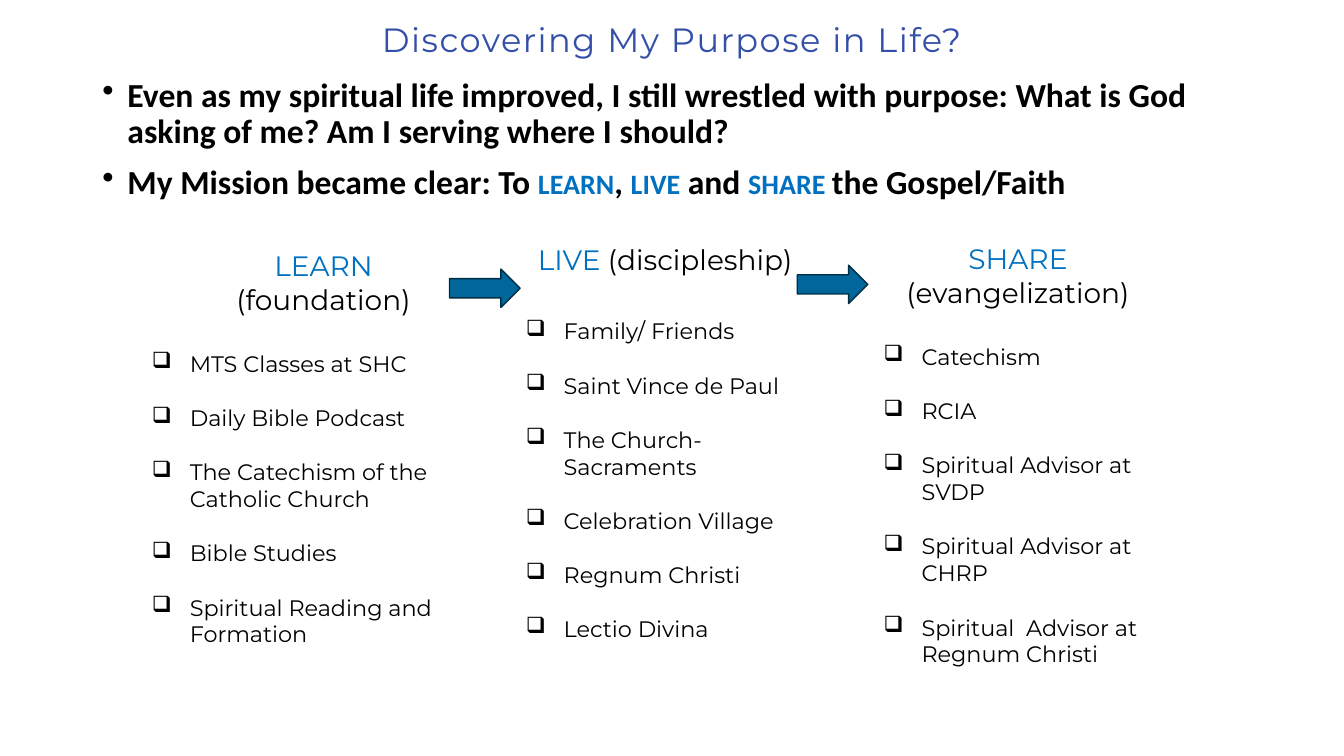
from lxml import etree
from pptx import Presentation
from pptx.dml import color
from pptx.enum import shapes, text
from pptx.oxml import ns
from pptx.util import Pt

BLUE, BLACK = "0070C0", "000000"
COLUMNS = [
    (101.5, 174.2, 259.2, 332, 24.4,
     [[("LEARN", BLUE)], [("(foundation)", BLACK)]],
     ["MTS Classes at SHC", "Daily Bible Podcast",
      "The Catechism of the Catholic Church", "Bible Studies",
      "Spiritual Reading and Formation"]),
    (368.6, 169.9, 213.1, 317.5, 29.3,
     [[("LIVE ", BLUE), ("(discipleship)", BLACK)]],
     ["Family/ Friends", "Saint Vince de Paul", "The Church-Sacraments",
      "Celebration Village", "Regnum Christi", "Lectio Divina"]),
    (624.2, 169.2, 205.9, 356.4, 24.4,
     [[("SHARE", BLUE)], [("(evangelization)", BLACK)]],
     ["Catechism", "RCIA", "Spiritual Advisor at SVDP",
      "Spiritual Advisor at CHRP", "Spiritual  Advisor at Regnum Christi"]),
]


def rgb(value):
    """Return the colour for a hex string."""
    return color.RGBColor.from_string(value)


def format_run(run, name, size, fill, bold=False):
    """Set the font of a run."""
    run.font.name = name
    run.font.size = Pt(size)
    run.font.bold = bold
    run.font.color.rgb = rgb(fill)


def add_run(paragraph, wording, name, size, fill, bold=False):
    """Append a formatted run to a paragraph."""
    run = paragraph.add_run()
    run.text = wording
    format_run(run, name, size, fill, bold)


def set_bullet(paragraph, character, indent):
    """Give a paragraph a bullet with a hanging indent."""
    properties = paragraph._p.get_or_add_pPr()
    properties.set("marL", str(Pt(indent)))
    properties.set("indent", str(Pt(-indent)))
    etree.SubElement(properties, ns.qn("a:buChar")).set("char", character)


def add_text_box(slide, left, top, width, height):
    """Add a wrapping text box and return its text frame."""
    frame = slide.shapes.add_textbox(
        Pt(left), Pt(top), Pt(width), Pt(height)).text_frame
    frame.word_wrap = True
    return frame


def next_paragraph(frame, index):
    """Return the first paragraph of a frame, or a new one after it."""
    return frame.add_paragraph() if index else frame.paragraphs[0]


def format_title(title):
    """Place and format the title placeholder."""
    title.left, title.top = Pt(66), Pt(-45.4)
    title.width, title.height = Pt(828), Pt(149.8)
    frame = title.text_frame
    frame.text = "Discovering My Purpose in Life?"
    frame.auto_size = text.MSO_AUTO_SIZE.NONE
    frame.vertical_anchor = text.MSO_ANCHOR.MIDDLE
    paragraph = frame.paragraphs[0]
    paragraph.alignment = text.PP_ALIGN.CENTER
    paragraph.line_spacing = 0.9
    run = paragraph.runs[0]
    format_run(run, "Montserrat", 24, "334FA8")
    run.font._element.set("spc", "110")


def add_statements(slide):
    """Add the two bold statements under the title."""
    statements = [
        [("Even as my spiritual life improved, I still wrestled with purpose: "
          "What is God asking of me? Am I serving where I should?", BLACK)],
        [("My Mission became clear: To ", BLACK), ("LEARN", BLUE),
         (", ", BLACK), ("LIVE", BLUE), (" and ", BLACK), ("SHARE ", BLUE),
         ("the Gospel/Faith", BLACK)],
    ]
    frame = add_text_box(slide, 66, 52.5, 828, 472.3)
    for index, parts in enumerate(statements):
        paragraph = next_paragraph(frame, index)
        set_bullet(paragraph, "•", 18)
        paragraph.line_spacing = 0.9
        paragraph.space_before = Pt(10 if index else 0)
        for wording, fill in parts:
            size = 20 if fill == BLUE else 24
            add_run(paragraph, wording, "Calibri", size, fill, True)


def add_column(slide, left, top, width, height, gap, heading, items):
    """Add a centred heading with its checklist."""
    frame = add_text_box(slide, left, top, width, height)
    frame.auto_size = text.MSO_AUTO_SIZE.SHAPE_TO_FIT_TEXT
    for index, parts in enumerate(heading):
        paragraph = next_paragraph(frame, index)
        paragraph.alignment = text.PP_ALIGN.CENTER
        for wording, fill in parts:
            add_run(paragraph, wording, "Montserrat", 20, fill)
    for index, item in enumerate(items):
        paragraph = frame.add_paragraph()
        set_bullet(paragraph, "❑", 27)
        paragraph.space_before = Pt(19.5 if index else gap)
        add_run(paragraph, item, "Montserrat", 16, BLACK)


def add_arrow(slide, left, top):
    """Add a block arrow between two columns."""
    arrow = slide.shapes.add_shape(
        shapes.MSO_SHAPE.RIGHT_ARROW, Pt(left), Pt(top), Pt(50.4), Pt(27.4))
    arrow.shadow.inherit = False
    arrow.fill.solid()
    arrow.fill.fore_color.rgb = rgb("016699")
    arrow.line.color.rgb = rgb("002D43")
    arrow.line.width = Pt(1)


def main():
    """Build and save the slide."""
    presentation = Presentation()
    presentation.slide_width, presentation.slide_height = Pt(960), Pt(540)
    slide = presentation.slides.add_slide(presentation.slide_layouts[5])
    format_title(slide.shapes.title)
    add_statements(slide)
    for column in COLUMNS:
        add_column(slide, *column)
    add_arrow(slide, 321.1, 192.2)
    add_arrow(slide, 569.5, 189.4)
    presentation.save("out.pptx")


if __name__ == "__main__":
    main()
